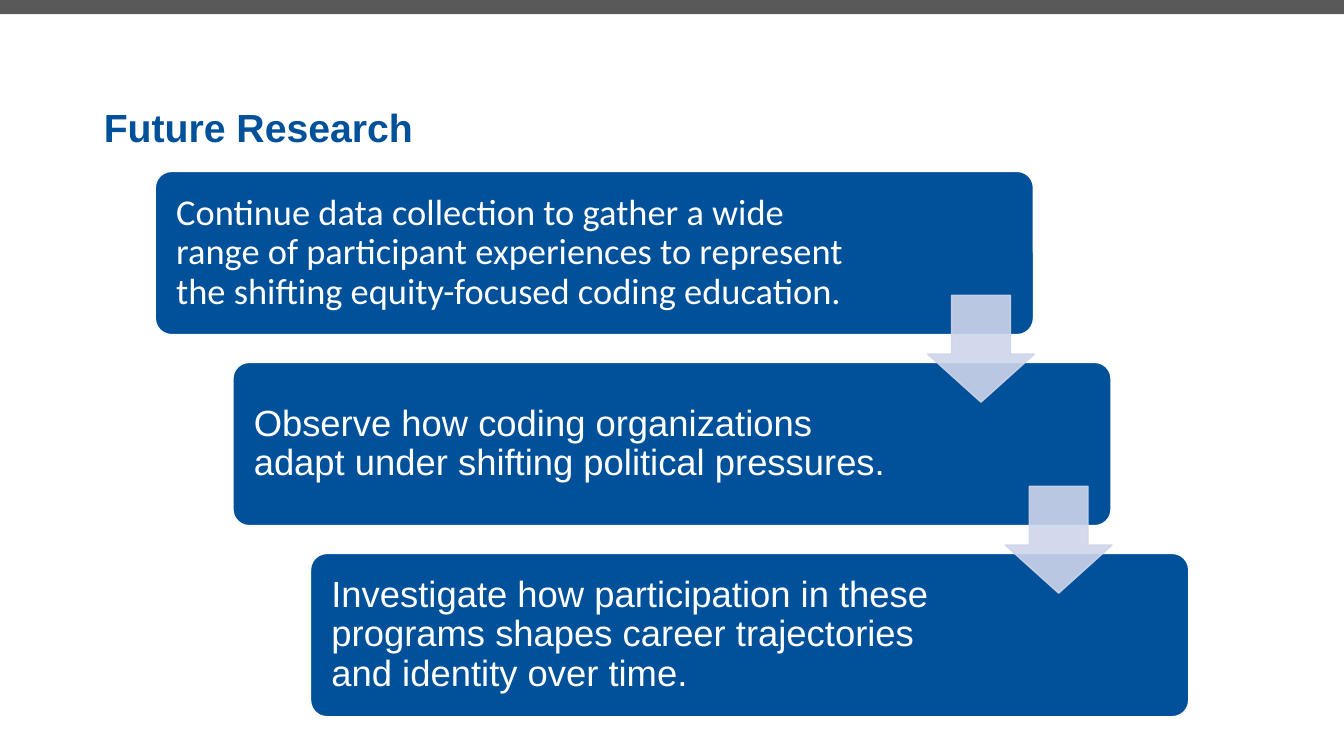
import pptx
import pptx.dml.color
import pptx.enum.shapes
import pptx.enum.text
import pptx.oxml
import pptx.oxml.ns
import pptx.util

Inches = pptx.util.Inches
Pt = pptx.util.Pt
RGBColor = pptx.dml.color.RGBColor
SHAPE = pptx.enum.shapes.MSO_SHAPE
ALIGN = pptx.enum.text.PP_ALIGN
ANCHOR = pptx.enum.text.MSO_ANCHOR
AUTO_SIZE = pptx.enum.text.MSO_AUTO_SIZE

BLUE = RGBColor(0x00, 0x50, 0x9A)
GRAY = RGBColor(0x59, 0x59, 0x59)
PALE_BLUE = RGBColor(0xCF, 0xD5, 0xEA)
WHITE = RGBColor(0xFF, 0xFF, 0xFF)

# Step text, font and the room kept free on the right
STEPS = [
    ("Continue data collection to gather a wide range of participant "
     "experiences to represent the shifting equity-focused coding education.",
     "Calibri", 1.82),
    ("Observe how coding organizations adapt under shifting political "
     "pressures.", "Arial", 1.98),
    ("Investigate how participation in these programs shapes career "
     "trajectories and identity over time.", "Arial", 1.98),
]
STEP_WIDTH, STEP_HEIGHT = 8.71, 1.62
ARROW_LEFT, ARROW_TOP, ARROW_SIZE = 7.66, 1.23, 1.06


def add_filled_shape(slide, kind, box, color):
    shape = slide.shapes.add_shape(kind, *[Inches(length) for length in box])
    shape.shadow.inherit = False
    shape.fill.solid()
    shape.fill.fore_color.rgb = color
    return shape


def add_top_bar(slide, box):
    bar = add_filled_shape(slide, SHAPE.RECTANGLE, box, GRAY)
    bar.line.fill.background()


def add_title(slide, box):
    title = slide.shapes.title
    title.left, title.top, title.width, title.height = map(Inches, box)
    frame = title.text_frame
    frame.text = "Future Research"
    frame.auto_size = AUTO_SIZE.SHAPE_TO_FIT_TEXT
    frame.vertical_anchor = ANCHOR.MIDDLE
    para = frame.paragraphs[0]
    para.alignment = ALIGN.LEFT
    para.font.name = "Arial"
    para.font.size = Pt(28)
    para.font.bold = True
    para.font.color.rgb = BLUE


def add_step(slide, box, text, font_name, right_room):
    step = add_filled_shape(slide, SHAPE.ROUNDED_RECTANGLE, box, BLUE)
    step.adjustments[0] = 0.1
    step.line.color.rgb = WHITE
    step.line.width = Pt(1)
    frame = step.text_frame
    frame.word_wrap = True
    frame.vertical_anchor = ANCHOR.MIDDLE
    frame.margin_left = Inches(0.16)
    frame.margin_right = Inches(right_room)
    frame.margin_top = frame.margin_bottom = Inches(0.11)
    frame.text = text
    para = frame.paragraphs[0]
    para.alignment = ALIGN.LEFT
    para.line_spacing = 0.9
    para.font.name = font_name
    para.font.size = Pt(26)
    para.font.color.rgb = WHITE


def add_arrow(slide, box):
    arrow = add_filled_shape(slide, SHAPE.DOWN_ARROW, box, PALE_BLUE)
    # The XML order of this preset is head position, then shaft width
    arrow.adjustments[0] = 0.55
    arrow.adjustments[1] = 0.45
    arrow.line.color.rgb = PALE_BLUE
    arrow.line.width = Pt(1)
    # Slight transparency on both fill and outline
    properties = arrow.element.spPr
    for color in properties.iter(pptx.oxml.ns.qn("a:srgbClr")):
        color.append(pptx.oxml.parse_xml(
            '<a:alpha %s val="90000"/>' % pptx.oxml.ns.nsdecls("a")))


def add_staircase(slide, box):
    left, top, width, height = box
    shift = (width - STEP_WIDTH) / (len(STEPS) - 1)
    drop = (height - STEP_HEIGHT) / (len(STEPS) - 1)
    corners = [(left + i * shift, top + i * drop) for i in range(len(STEPS))]
    for (x, y), step in zip(corners, STEPS):
        add_step(slide, (x, y, STEP_WIDTH, STEP_HEIGHT), *step)
    # Arrows lie over the steps they join
    for x, y in corners[:-1]:
        add_arrow(slide, (x + ARROW_LEFT, y + ARROW_TOP,
                          ARROW_SIZE, ARROW_SIZE))


def main():
    deck = pptx.Presentation()
    deck.slide_width, deck.slide_height = Inches(13.33), Inches(7.5)
    slide = deck.slides.add_slide(deck.slide_layouts.get_by_name("Title Only"))
    add_top_bar(slide, (0, 0, 13.33, 0.14))
    add_title(slide, (0.93, 0.97, 9.64, 0.57))
    add_staircase(slide, (1.54, 1.7, 10.25, 5.41))
    deck.save("out.pptx")


if __name__ == "__main__":
    main()
